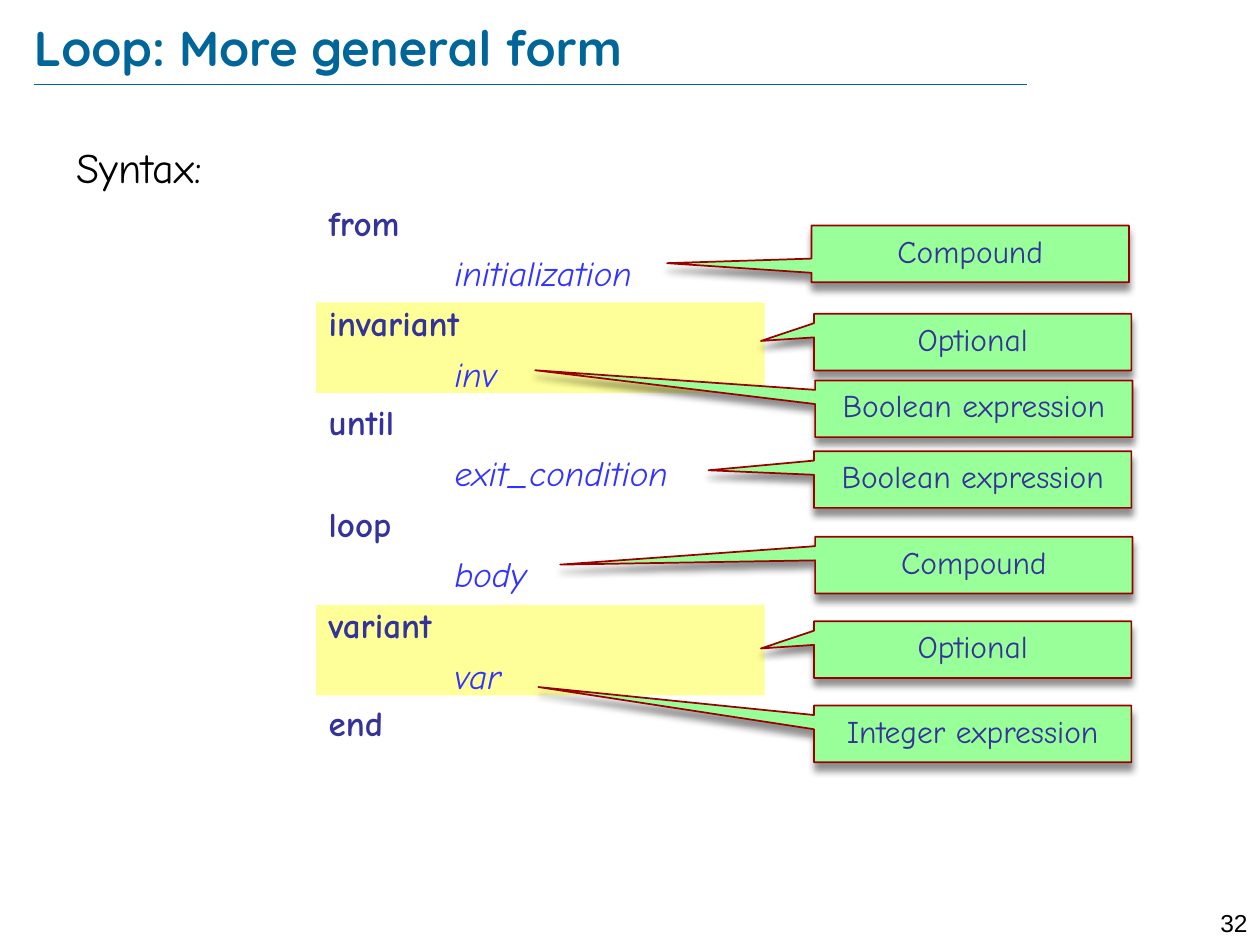
"""Build the slide on the general form of a loop."""
from lxml import etree
from pptx import Presentation
from pptx.dml.color import RGBColor
from pptx.enum import shapes, text
from pptx.oxml import ns
from pptx.util import Pt

TEAL = RGBColor(0x00, 0x66, 0x99)
NAVY = RGBColor(0x33, 0x33, 0x99)
BLUE = RGBColor(0x33, 0x33, 0xFF)
YELLOW = RGBColor(0xFF, 0xFF, 0x99)
GREEN = RGBColor(0x99, 0xFF, 0x99)
RED = RGBColor(0x99, 0x00, 0x00)
BLACK = RGBColor(0, 0, 0)

LINE_GAP = 5
BLOCK_GAP = 61
CALLOUT_SIZE = (181.4, 32.4)
CALLOUTS = [
    ("Compound", 463.7, 128.9, -0.955, 0.164),
    ("Optional", 465.1, 179.3, -0.667, -0.02),
    ("Boolean expression", 465.8, 217.4, -1.382, -0.68),
    ("Boolean expression", 465.1, 257.8, -0.832, -0.163),
    ("Compound", 465.8, 306.7, -1.303, -0.008),
    ("Integer expression", 465.1, 403.2, -1.368, -0.828),
    ("Optional", 465.1, 355, -0.667, -0.02),
]
SYNTAX = [
    ("\t\tfrom", LINE_GAP),
    ("\t\t\tinitialization", LINE_GAP),
    ("\t\tuntil", BLOCK_GAP),
    ("\t\t\texit_condition", LINE_GAP),
    ("\t\tloop", LINE_GAP),
    ("\t\t\tbody", LINE_GAP),
    ("\t\tend", BLOCK_GAP),
]


def sub(parent, tag, **attrs):
    """Append a DrawingML child element."""
    values = {k: str(v) for k, v in attrs.items()}
    return etree.SubElement(parent, ns.qn(tag), values)


class Deck:
    """Hold the style and the current slide."""

    font = "Comic Neue"

    def __init__(self):
        self.prs = Presentation()
        self.prs.slide_width, self.prs.slide_height = Pt(720), Pt(540)
        self.s = self.prs.slides.add_slide(self.prs.slide_layouts[5])

    def style(self, p, size, color, bold=False, italic=False, name=None):
        """Set the font of a whole paragraph."""
        f = p.font
        f.name, f.size, f.bold, f.italic = name or self.font, Pt(size), bold, italic
        f.color.rgb = color

    def code(self, p, line, gap):
        """Fill a paragraph with a keyword or an indented italic part."""
        p.text = line
        p.alignment = text.PP_ALIGN.LEFT
        p.space_before = Pt(gap)
        tabs = sub(p._p.get_or_add_pPr(), "a:tabLst")
        for i in range(1, 4):
            sub(tabs, "a:tab", pos=Pt(72 * i), algn="l")
        part = line.startswith("\t\t\t") or line.count("\t") == 1
        self.style(p, 20, BLUE if part else NAVY, not part, part)

    def title(self, words, box):
        """Place the title placeholder."""
        sp = self.s.shapes.title
        sp.left, sp.top, sp.width, sp.height = map(Pt, box)
        tf = sp.text_frame
        tf.margin_left = tf.margin_right = tf.margin_top = tf.margin_bottom = 0
        tf.vertical_anchor = text.MSO_ANCHOR.MIDDLE
        tf.auto_size = text.MSO_AUTO_SIZE.NONE
        p = tf.paragraphs[0]
        p.text, p.alignment = words, text.PP_ALIGN.LEFT
        self.style(p, 28, TEAL, bold=True, name="Quicksand")

    def rule(self, x1, x2, y):
        """Draw a thin horizontal line."""
        c = self.s.shapes.add_connector(
            shapes.MSO_CONNECTOR.STRAIGHT, Pt(x1), Pt(y), Pt(x2), Pt(y))
        c.line.color.rgb, c.line.width = TEAL, Pt(0.25)
        sub(c._element.spPr, "a:effectLst")

    def textbox(self, words, box, size, align=text.PP_ALIGN.LEFT, name=None):
        """Add a wrapping text box and return its frame."""
        tf = self.s.shapes.add_textbox(*map(Pt, box)).text_frame
        tf.word_wrap = True
        p = tf.paragraphs[0]
        p.text, p.alignment = words, align
        self.style(p, size, BLACK, name=name)
        return tf

    def panel(self, keyword, part, top):
        """Add a yellow panel for an optional clause."""
        sp = self.s.shapes.add_shape(
            shapes.MSO_SHAPE.RECTANGLE, Pt(180.7), Pt(top), Pt(256.3), Pt(51.8))
        sp.shadow.inherit = False
        sp.fill.solid()
        sp.fill.fore_color.rgb = YELLOW
        sp.line.fill.background()
        tf = sp.text_frame
        tf.word_wrap, tf.vertical_anchor = True, text.MSO_ANCHOR.MIDDLE
        self.code(tf.paragraphs[0], keyword, 0)
        self.code(tf.add_paragraph(), "\t" + part, LINE_GAP)

    def callout(self, words, left, top, dx, dy):
        """Add a green callout whose tip lies at the given offset."""
        sp = self.s.shapes.add_shape(
            shapes.MSO_SHAPE.RECTANGULAR_CALLOUT,
            *map(Pt, (left, top, *CALLOUT_SIZE)))
        sp.adjustments[0], sp.adjustments[1] = dx, dy
        sp.fill.solid()
        sp.fill.fore_color.rgb = GREEN
        sp.line.color.rgb, sp.line.width = RED, Pt(1)
        sp.shadow.inherit = False
        effects = sp._element.spPr.find(ns.qn("a:effectLst"))
        shadow = sub(effects, "a:outerShdw", blurRad=Pt(4), dist=Pt(4),
                     dir=5400000, rotWithShape=0)
        sub(sub(shadow, "a:srgbClr", val=BLACK), "a:alpha", val=43000)
        tf = sp.text_frame
        tf.word_wrap, tf.vertical_anchor = True, text.MSO_ANCHOR.MIDDLE
        tf.margin_left = tf.margin_right = 0
        p = tf.paragraphs[0]
        p.text, p.alignment, p.line_spacing = words, text.PP_ALIGN.CENTER, 0.8
        self.style(p, 18, NAVY)


def main():
    d = Deck()
    d.title("Loop: More general form", (19.4, 9.4, 625.7, 34.6))
    d.rule(19.4, 586.8, 48.2)
    d.textbox("32", (680.4, 515.5, 39.6, 17.3), 14, text.PP_ALIGN.RIGHT, "Arial")
    d.panel("invariant", "inv", 172.8)
    d.panel("variant", "var", 345.6)
    tf = d.textbox("Syntax:", (36.7, 77.6, 663.1, 414.2), 24)
    for line, gap in SYNTAX:
        d.code(tf.add_paragraph(), line, gap)
    for item in CALLOUTS:
        d.callout(*item)
    d.prs.save("out.pptx")


if __name__ == "__main__":
    main()
